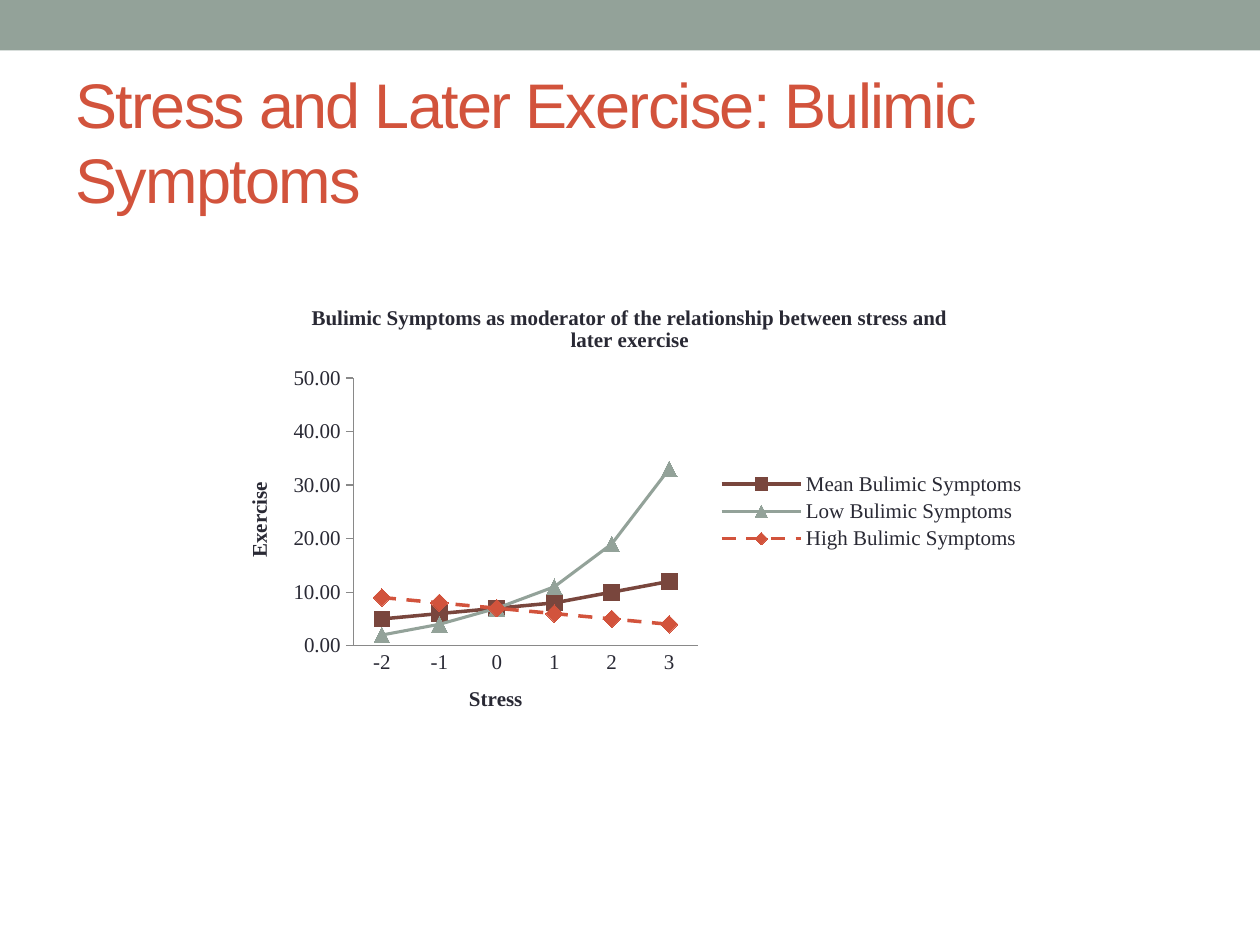
from lxml import etree
from pptx import Presentation
from pptx.chart.data import CategoryChartData
from pptx.dml.color import RGBColor
from pptx.enum.chart import XL_CHART_TYPE as ChartType
from pptx.enum.chart import XL_LEGEND_POSITION as LegendPos
from pptx.enum.chart import XL_MARKER_STYLE as Marker
from pptx.enum.chart import XL_TICK_MARK as Tick
from pptx.enum.dml import MSO_LINE_DASH_STYLE as Dash
from pptx.enum.shapes import MSO_SHAPE as Shape
from pptx.enum.text import MSO_ANCHOR as Anchor
from pptx.enum.text import MSO_AUTO_SIZE as AutoSize
from pptx.enum.text import PP_ALIGN as Align
from pptx.oxml.ns import qn
from pptx.util import Cm, Pt

INK, SAGE, RUST, BROWN, GREY = "292934", "93A299", "D2533C", "79463D", "898989"
SERIF = "Times New Roman"
STRESS = ["-2", "-1", "0", "1", "2", "3"]
SERIES = [
    ("Mean Bulimic Symptoms", [5, 6, 7, 8, 10, 12],
     BROWN, 2, None, Marker.SQUARE, 9),
    ("Low Bulimic Symptoms", [2, 4, 7, 11, 19, 33],
     SAGE, 1.75, None, Marker.TRIANGLE, 9),
    ("High Bulimic Symptoms", [9, 8, 7, 6, 5, 4],
     RUST, 2, Dash.DASH, Marker.DIAMOND, 10),
]


def rgb(value):
    return RGBColor.from_string(value)


def paint(fmt, color):
    fmt.fill.solid()
    fmt.fill.fore_color.rgb = rgb(color)


def set_font(font, size, name=SERIF, color=INK, bold=False):
    font.size, font.name, font.bold = Pt(size), name, bold
    font.color.rgb = rgb(color)


def add_band(s, x, y, w, h):
    sp = s.shapes.add_shape(Shape.RECTANGLE, x, y, w, h)
    sp.shadow.inherit = False
    paint(sp, SAGE)
    sp.line.fill.background()


def place_title(s, text, x, y, w, h):
    sp = s.shapes.title
    sp.left, sp.top, sp.width, sp.height = x, y, w, h
    tf = sp.text_frame
    tf.text = text
    tf.word_wrap = True
    tf.auto_size = AutoSize.NONE
    tf.vertical_anchor = Anchor.MIDDLE
    p = tf.paragraphs[0]
    p.alignment = Align.LEFT
    r = p.runs[0]
    set_font(r.font, 36, "Arial", RUST)
    r.font._element.set("spc", "-100")


def set_caption(owner, text):
    tf = owner.text_frame
    tf.text = text
    set_font(tf.paragraphs[0].runs[0].font, 12, bold=True)


def style_axis(axis, title, tick):
    axis.has_major_gridlines = False
    axis.major_tick_mark = tick
    axis.minor_tick_mark = Tick.NONE
    axis.format.line.color.rgb = rgb(GREY)
    axis.format.line.width = Pt(0.75)
    set_font(axis.tick_labels.font, 12)
    set_caption(axis.axis_title, title)


def style_series(series, color, width, dash, marker, size):
    series.smooth = False
    line = series.format.line
    line.color.rgb = rgb(color)
    line.width = Pt(width)
    if dash:
        line.dash_style = dash
    series.marker.style = marker
    series.marker.size = size
    paint(series.marker.format, color)
    series.marker.format.line.color.rgb = rgb(color)


def fix_plot_area(chart, x, y, w, h):
    area = chart._chartSpace.chart.plotArea
    for old in area.findall(qn("c:layout")):
        area.remove(old)
    layout = etree.Element(qn("c:layout"))
    manual = etree.SubElement(layout, qn("c:manualLayout"))
    settings = [("layoutTarget", "inner"), ("xMode", "edge"), ("yMode", "edge"),
                ("x", x), ("y", y), ("w", w), ("h", h)]
    for tag, value in settings:
        etree.SubElement(manual, qn(f"c:{tag}")).set("val", str(value))
    area.insert(0, layout)


def add_exercise_chart(s, x, y, w, h):
    data = CategoryChartData(number_format="#,##0.00")
    data.categories = STRESS
    for name, values, *_ in SERIES:
        data.add_series(name, values)
    chart = s.shapes.add_chart(ChartType.LINE_MARKERS, x, y, w, h, data).chart
    set_font(chart.font, 10, "Arial")
    set_caption(chart.chart_title, "Bulimic Symptoms as moderator of the "
                "relationship between stress and later exercise")
    chart.chart_title.include_in_layout = False
    chart.has_legend = True
    chart.legend.position = LegendPos.RIGHT
    chart.legend.include_in_layout = False
    set_font(chart.legend.font, 12)

    style_axis(chart.category_axis, "Stress", Tick.NONE)
    axis = chart.value_axis
    style_axis(axis, "Exercise", Tick.OUTSIDE)
    axis.minimum_scale, axis.maximum_scale, axis.major_unit = 0, 50, 10
    axis.tick_labels.number_format = "#,##0.00"
    axis.tick_labels.number_format_is_linked = False

    plot = chart.plots[0]
    plot.vary_by_categories = False
    for series, (_, _, *style) in zip(plot.series, SERIES):
        style_series(series, *style)
    fix_plot_area(chart, Cm(2.68) / w, Cm(1.88) / h, Cm(6.95) / w, Cm(5.4) / h)


def main():
    prs = Presentation()
    prs.slide_width, prs.slide_height = Cm(25.4), Cm(19.05)
    s = prs.slides.add_slide(prs.slide_layouts[5])
    add_band(s, 0, 0, prs.slide_width, Cm(1.02))
    place_title(s, "Stress and Later Exercise: Bulimic Symptoms",
                Cm(1.27), Cm(1.47), Cm(22.86), Cm(2.74))
    add_exercise_chart(s, Cm(4.44), Cm(5.74), Cm(16.51), Cm(9.14))
    prs.save("out.pptx")


if __name__ == "__main__":
    main()
